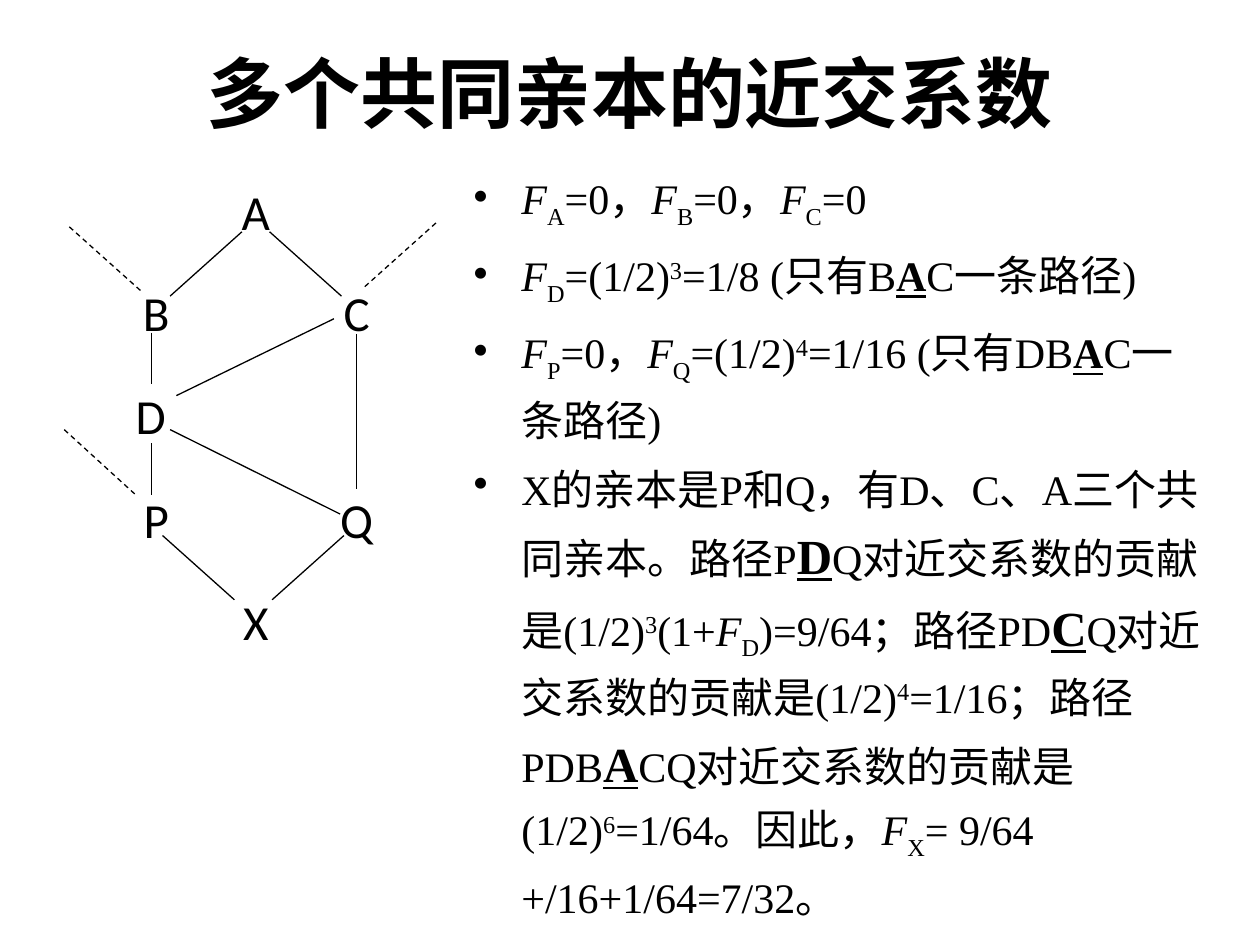
import pptx
import pptx.dml.color
import pptx.enum.dml
import pptx.enum.shapes
import pptx.enum.text
import pptx.oxml.ns
import pptx.util
from lxml import etree
from pptx.util import Inches

BLACK = pptx.dml.color.RGBColor(0, 0, 0)
WHITE = pptx.dml.color.RGBColor(255, 255, 255)
SERIF, SANS = "Times New Roman", "Calibri"
CENTER = pptx.enum.text.PP_ALIGN.CENTER
MIDDLE = pptx.enum.text.MSO_ANCHOR.MIDDLE

# Spans are parted by "|". A leading mark sets the style of its span:
# ~ italic, _ subscript, ^ superscript, * key ancestor, # large key ancestor
BULLETS = [
    "~F|_A|=0，|~F|_B|=0，|~F|_C|=0",
    "~F|_D|=(1/2)|^3|=1/8 (只有B|*A|C一条路径)",
    "~F|_P|=0，|~F|_Q|=(1/2)|^4|=1/16 (只有DB|*A|C一条路径)",
    "X的亲本是P和Q，有D、C、A三个共同亲本。路径P|#D|Q对近交系数的贡献是(1/2)|^3|(1+|~F|_D"
    "|)=9/64；路径PD|#C|Q对近交系数的贡献是(1/2)|^4|=1/16；路径PDB|#A"
    "|CQ对近交系数的贡献是(1/2)|^6|=1/64。因此，|~F|_X|= 9/64 +/16+1/64=7/32。",
]

LEFT, MID, RIGHT = 0.9, 1.69, 2.49
ROWS = [1.39, 2.19, 3.01, 3.83, 4.64]
ANIMALS = [
    ("A", MID, 0), ("B", LEFT, 1), ("C", RIGHT, 1), ("D ", LEFT, 2),
    ("P", LEFT, 3), ("Q", RIGHT, 3), ("X", MID, 4),
]
DESCENT = [
    (1.92, 1.84, 1.35, 2.35),  # A-B
    (2.14, 1.84, 2.71, 2.35),  # A-C
    (1.29, 4.25, 1.86, 4.76),  # P-X
    (2.73, 4.25, 2.16, 4.76),  # Q-X
    (1.2, 2.64, 1.2, 3.05),    # B-D
    (1.2, 3.52, 1.2, 3.93),    # D-P
    (2.83, 2.65, 2.83, 3.88),  # C-Q
    (1.35, 3.41, 2.7, 4.08),   # D-Q
    (2.65, 2.53, 1.4, 3.14),   # C-D
]
OUTSIDE_PARENTS = [
    (0.55, 1.8, 1.12, 2.31),
    (3.46, 1.77, 2.89, 2.28),
    (0.51, 3.41, 1.08, 3.93),
]


class PedigreeSlide:
    def __init__(self, page):
        self.page = page
        fill = page.background.fill
        fill.solid()
        fill.fore_color.rgb = WHITE

    def frame(self, left, top, width, height):
        box = self.page.shapes.add_textbox(
            Inches(left), Inches(top), Inches(width), Inches(height))
        box.text_frame.word_wrap = True
        return box.text_frame

    def style(self, para, face, size, bold=False):
        para.font.name = face
        para.font.size = pptx.util.Pt(size)
        para.font.bold = bold
        para.font.color.rgb = BLACK

    def label(self, text, place, face, size, bold=False):
        """Add one centred line of text."""
        frame = self.frame(*place)
        frame.vertical_anchor = MIDDLE
        para = frame.paragraphs[0]
        para.text = text
        para.alignment = CENTER
        self.style(para, face, size, bold)

    def bullets(self, items, place):
        frame = self.frame(*place)
        for index, item in enumerate(items):
            para = frame.add_paragraph() if index else frame.paragraphs[0]
            para.line_spacing = 1.2
            para.space_before = pptx.util.Pt(4.8)
            props = para._p.get_or_add_pPr()
            props.set("marL", str(Inches(0.38)))
            props.set("indent", str(-Inches(0.38)))
            bullet = etree.SubElement(props, pptx.oxml.ns.qn("a:buChar"))
            bullet.set("char", "•")
            self.style(para, SERIF, 24)
            for text in item.split("|"):
                self.span(para, text)

    def span(self, para, text):
        """Add a run, styled by its leading mark if it has one."""
        mark = text[0] if text[0] in "~_^*#" else ""
        span = para.add_run()
        span.text = text[len(mark):]
        if mark == "~":
            span.font.italic = True
        elif mark in ("_", "^"):
            baseline = "-25000" if mark == "_" else "30000"
            span._r.get_or_add_rPr().set("baseline", baseline)
        elif mark:
            span.font.bold = True
            span.font.underline = True
            if mark == "#":
                span.font.size = pptx.util.Pt(28)

    def line(self, ends, dashed=False):
        line = self.page.shapes.add_connector(
            pptx.enum.shapes.MSO_CONNECTOR.STRAIGHT, *map(Inches, ends))
        line.line.color.rgb = BLACK
        line.line.width = pptx.util.Pt(0.75)
        if dashed:
            line.line.dash_style = pptx.enum.dml.MSO_LINE.DASH
        etree.SubElement(line._element.spPr, pptx.oxml.ns.qn("a:effectLst"))


def main():
    deck = pptx.Presentation()
    deck.slide_width, deck.slide_height = Inches(10), Inches(7.5)
    slide = PedigreeSlide(deck.slides.add_slide(deck.slide_layouts[6]))

    slide.label("多个共同亲本的近交系数", (0.5, 0.3, 9, 0.85), SERIF, 44, bold=True)
    slide.bullets(BULLETS, (3.66, 1.23, 5.98, 5.83))
    for name, left, row in ANIMALS:
        slide.label(name, (left, ROWS[row], 0.68, 0.57), SANS, 28)
    for ends in DESCENT:
        slide.line(ends)
    for ends in OUTSIDE_PARENTS:
        slide.line(ends, dashed=True)

    deck.save("out.pptx")


if __name__ == "__main__":
    main()
